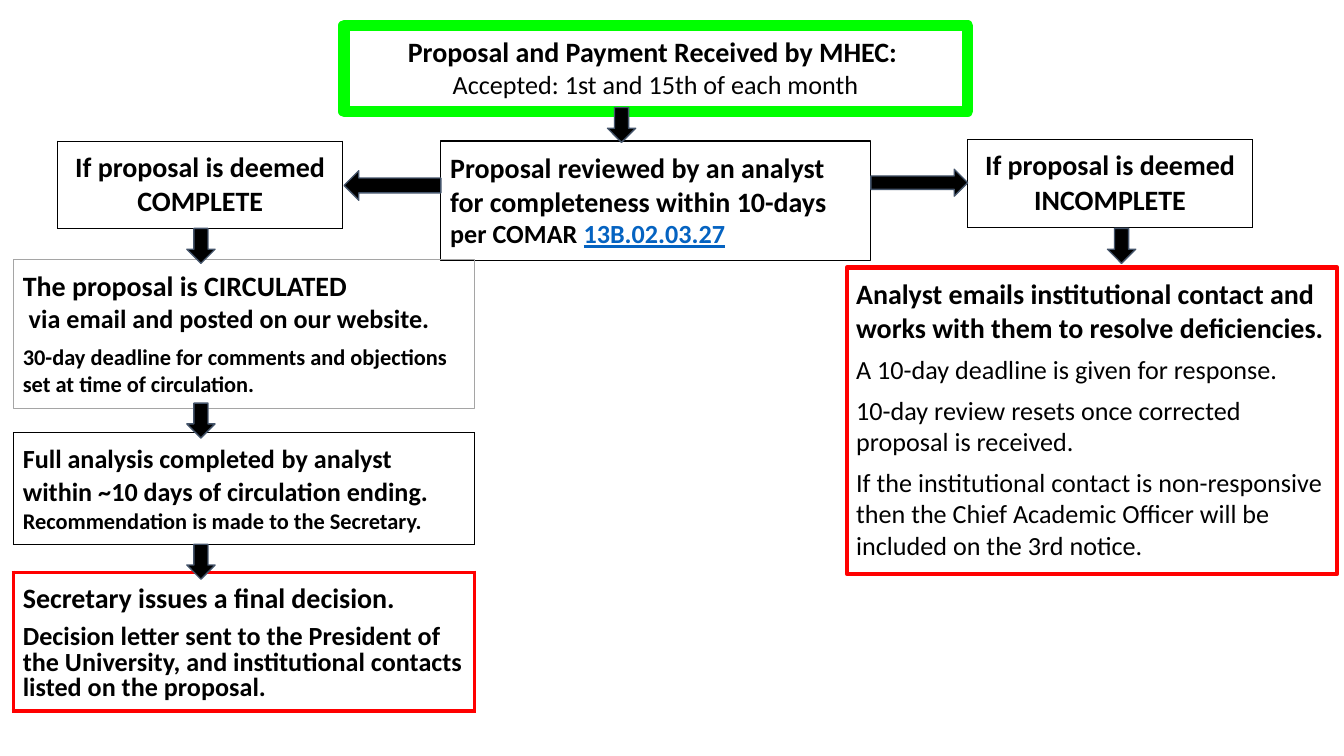
"""Build the proposal review flowchart slide."""
from lxml import etree
from pptx import Presentation
from pptx import util as u
from pptx.dml.color import RGBColor
from pptx.enum import shapes, text
from pptx.oxml.ns import qn


def color(value):
    """Turn a hex string into a colour."""
    return RGBColor.from_string(value)


def write(frame, align, paragraphs):
    """Write paragraphs of (space before, line spacing, runs) into a frame."""
    frame.word_wrap = True
    for index, (before, spacing, runs) in enumerate(paragraphs):
        para = frame.add_paragraph() if index else frame.paragraphs[0]
        para.alignment = align
        para.space_before = u.Pt(before)
        para.line_spacing = spacing
        for words, size, bold, ink in runs:
            span = para.add_run()
            span.text = words
            span.font.name = "Calibri"
            span.font.size = u.Pt(size)
            span.font.bold = bold
            span.font.underline = ink == LINK
            span.font.color.rgb = color(ink)


BLACK, RED, LINK = "000000", "FF0000", "0563C1"
LEFT, CENTER = text.PP_ALIGN.LEFT, text.PP_ALIGN.CENTER
MARGINS = ("margin_left", "margin_right", "margin_top", "margin_bottom")

deck = Presentation()
deck.slide_width = u.Inches(10)
deck.slide_height = u.Inches(10 * 9 / 16)
page = deck.slides.add_slide(deck.slide_layouts[6])

boxes = [
    ((2.56, 0.19, 4.64, 0.64), "00FF00", 6, CENTER, [
        (0, 1, [("Proposal and Payment Received by MHEC: ", 15, True, BLACK)]),
        (0, 1, [("Accepted: 1st and 15th of each month", 14, False, BLACK)]),
    ]),
    ((3.28, 1.05, 3.2, 0.89), BLACK, 0.75, LEFT, [
        (0, 1, [("Proposal reviewed by an analyst for completeness within 10-days ", 15, True, BLACK),
                ("per COMAR ", 14, True, BLACK),
                ("13B.02.03.27", 14, True, LINK)]),
    ]),
    ((0.1, 1.93, 3.43, 1.11), "A5A5A5", 0.75, LEFT, [
        (0, 1, [("The proposal is CIRCULATED", 15, True, BLACK)]),
        (0, 1, [(" via email and posted on our website.", 14, True, BLACK)]),
        (5, 1, [("30-day deadline for comments and objections set at time of circulation.",
                 12, True, BLACK)]),
    ]),
    ((6.3, 1.99, 3.65, 2.28), RED, 2.25, LEFT, [
        (0, 1, [("Analyst emails institutional contact and works with them to resolve deficiencies.",
                 15, True, BLACK)]),
        (5, 1, [("A 10-day deadline is given for response.", 14, False, BLACK)]),
        (5, 1, [("10-day review resets once corrected proposal is received.", 14, False, BLACK)]),
        (5, 1, [("If the institutional contact is non-responsive then the Chief Academic Officer "
                 "will be included on the 3rd notice.", 14, False, BLACK)]),
    ]),
]
for place, outline, weight, align, paragraphs in boxes:
    box = page.shapes.add_shape(shapes.MSO_SHAPE.RECTANGLE, *map(u.Inches, place))
    box.shadow.inherit = False
    box.fill.background()
    box.line.color.rgb = color(outline)
    box.line.width = u.Pt(weight)
    frame = box.text_frame
    for margin in MARGINS:
        setattr(frame, margin, u.Inches(0.07))
    frame.vertical_anchor = text.MSO_ANCHOR.TOP
    write(frame, align, paragraphs)
    frame.auto_size = text.MSO_AUTO_SIZE.SHAPE_TO_FIT_TEXT

tables = [
    ((0.43, 1.05, 2.12, 0.65), BLACK, 0.75, CENTER, [
        (0, 1, [("If proposal is deemed COMPLETE", 15, True, BLACK)]),
    ]),
    ((7.2, 1.04, 2.12, 0.65), BLACK, 0.75, CENTER, [
        (0, 1, [("If proposal is deemed INCOMPLETE", 15, True, BLACK)]),
    ]),
    ((0.1, 3.22, 3.43, 0.83), BLACK, 0.75, LEFT, [
        (0, 1, [("Full analysis completed", 14, True, BLACK),
                (" ", 15, True, BLACK),
                ("by analyst within ~10 days of circulation ending. ", 14, True, BLACK),
                ("Recommendation is made to the Secretary.", 12, True, BLACK)]),
    ]),
    ((0.1, 4.26, 3.43, 1.03), RED, 2.25, LEFT, [
        (0, 1, [("Secretary issues a final decision.", 15, True, BLACK),
                (" ", 14, True, BLACK)]),
        (5, 0.8, [("Decision letter sent to the President of the University, and institutional "
                   "contacts listed on the proposal.", 14, True, BLACK)]),
    ]),
]
for place, outline, weight, align, paragraphs in tables:
    table = page.shapes.add_table(1, 1, *map(u.Inches, place)).table
    table.first_row = table.horz_banding = False
    cell = table.cell(0, 0)
    for margin in MARGINS:
        setattr(cell, margin, u.Inches(0.07))
    cell.fill.background()
    write(cell.text_frame, align, paragraphs)
    properties = cell._tc.get_or_add_tcPr()
    for index, side in enumerate(("a:lnL", "a:lnR", "a:lnT", "a:lnB")):
        border = etree.Element(qn(side), w=str(u.Pt(weight)))
        fill = etree.SubElement(border, qn("a:solidFill"))
        etree.SubElement(fill, qn("a:srgbClr"), val=outline)
        properties.insert(index, border)

DOWN = shapes.MSO_SHAPE.DOWN_ARROW
arrows = [(DOWN, left, top, 0.21, 0.26) for left, top in (
    (4.52, 0.8), (1.39, 1.7), (1.39, 3), (1.39, 4.05), (8.24, 1.7))]
arrows += [
    (shapes.MSO_SHAPE.LEFT_ARROW, 2.56, 1.27, 0.72, 0.22),
    (shapes.MSO_SHAPE.RIGHT_ARROW, 6.48, 1.26, 0.72, 0.2),
]
for kind, *place in arrows:
    arrow = page.shapes.add_shape(kind, *map(u.Inches, place))
    arrow.shadow.inherit = False
    arrow.fill.solid()
    arrow.fill.fore_color.rgb = color(BLACK)
    arrow.line.color.rgb = color("44546A")
    arrow.line.width = u.Pt(0.75)

deck.save("out.pptx")
